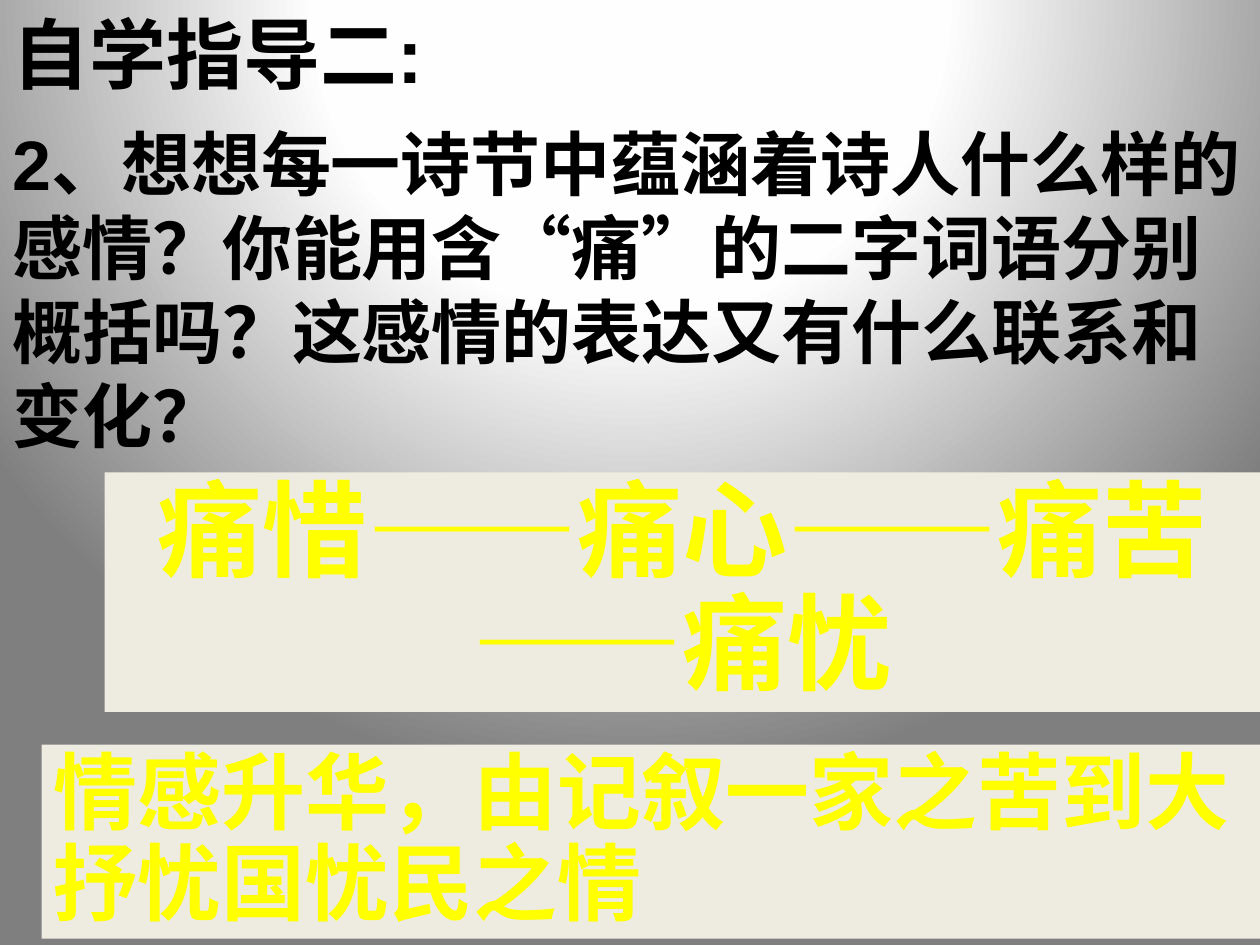
from lxml import etree
from pptx import Presentation
from pptx.dml.color import RGBColor
from pptx.enum.lang import MSO_LANGUAGE_ID
from pptx.enum.shapes import MSO_SHAPE
from pptx.enum.text import MSO_ANCHOR, MSO_AUTO_SIZE, PP_ALIGN
from pptx.oxml import parse_xml
from pptx.oxml.ns import qn
from pptx.util import Inches, Pt

RECTANGLE = MSO_SHAPE.RECTANGLE
TOP = MSO_ANCHOR.TOP
FIT_SHAPE = MSO_AUTO_SIZE.SHAPE_TO_FIT_TEXT
LEFT, CENTER = PP_ALIGN.LEFT, PP_ALIGN.CENTER
CHINESE = MSO_LANGUAGE_ID.SIMPLIFIED_CHINESE

THEME = {
    "stops": [(0, "FFFFFF"), (40, "FEFEFE"), (100, "7F7F7F")],
    "center": {"l": 50, "t": -80, "r": 50, "b": 180},
    "question": {"font": "Arial", "color": "000000", "fill": None, "spacing": 1.0},
    "answer": {"font": "Times New Roman", "color": "FFFF00", "fill": "EEECE1", "spacing": 0.9},
}

BLOCKS = [
    ("question", (0, 0, 7.42, 1.93), 44, LEFT, "自学指导二:"),
    ("question", (0, 0.91, 10, 3.77), 40, LEFT,
     "2、想想每一诗节中蕴涵着诗人什么样的感情？你能用含“痛”的二字词语分别概括吗？"
     "这感情的表达又有什么联系和变化？"),
    ("answer", (0.83, 3.75, 9.17, 1.9), 60, CENTER, "痛惜——痛心——痛苦 ——痛忧"),
    ("answer", (0.33, 5.91, 9.67, 1.54), 48, LEFT,
     "情感升华，由记叙一家之苦到大抒忧国忧民之情"),
]


def apply_format(target, values):
    """Set each attribute named in values on target."""
    for name, value in values.items():
        setattr(target, name, value)


def paint_background(page):
    """Fill the page with the theme's circular gradient."""
    page.background.fill.solid()
    solid = next(page.background.fill._xPr.iter(qn("a:solidFill")))
    gradient = parse_xml(
        '<a:gradFill xmlns:a="http://schemas.openxmlformats.org/drawingml/2006/main" '
        'rotWithShape="1"><a:gsLst/><a:path path="circle"><a:fillToRect/></a:path></a:gradFill>'
    )
    stops = gradient.find(qn("a:gsLst"))
    for position, color in THEME["stops"]:
        stop = etree.SubElement(stops, qn("a:gs"), pos=str(position * 1000))
        etree.SubElement(stop, qn("a:srgbClr"), val=color)
    center = next(gradient.iter(qn("a:fillToRect")))
    for side, percent in THEME["center"].items():
        center.set(side, str(percent * 1000))
    solid.getparent().replace(solid, gradient)


def add_block(page, role, place, size, alignment, text):
    """Add one text block in the style of its role."""
    style = THEME[role]
    bounds = [Inches(length) for length in place]
    if style["fill"]:
        box = page.shapes.add_shape(RECTANGLE, *bounds)
        box.shadow.inherit = False
        box.fill.solid()
        box.fill.fore_color.rgb = RGBColor.from_string(style["fill"])
        box.line.fill.background()
    else:
        box = page.shapes.add_textbox(*bounds)
    apply_format(box.text_frame, {
        "word_wrap": True, "vertical_anchor": TOP, "auto_size": FIT_SHAPE,
    })
    para = box.text_frame.paragraphs[0]
    apply_format(para, {"alignment": alignment, "line_spacing": style["spacing"]})
    span = para.add_run()
    span.text = text
    apply_format(span.font, {
        "name": style["font"], "size": Pt(size), "bold": True, "language_id": CHINESE,
    })
    span.font.color.rgb = RGBColor.from_string(style["color"])


def main():
    """Build the deck and save it."""
    deck = Presentation()
    apply_format(deck, {"slide_width": Inches(10), "slide_height": Inches(7.5)})
    page = deck.slides.add_slide(deck.slide_layouts[6])
    paint_background(page)
    for block in BLOCKS:
        add_block(page, *block)
    deck.save("out.pptx")


if __name__ == "__main__":
    main()
